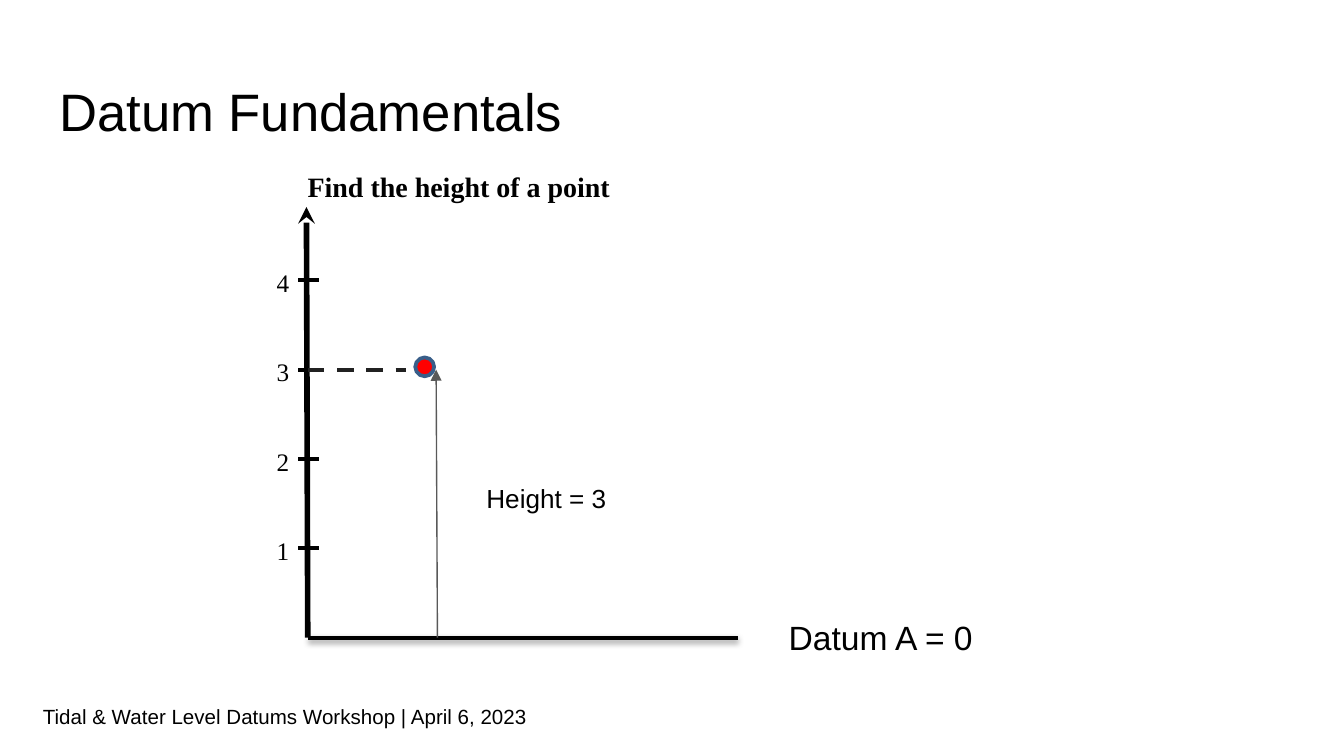
from dataclasses import dataclass

from lxml import etree
from pptx import Presentation
from pptx.dml.color import RGBColor
from pptx.enum.dml import MSO_LINE
from pptx.enum.shapes import MSO_CONNECTOR, MSO_SHAPE
from pptx.enum.text import MSO_ANCHOR, MSO_AUTO_SIZE, PP_ALIGN
from pptx.oxml import parse_xml
from pptx.oxml.ns import nsdecls, qn
from pptx.util import Inches, Pt


@dataclass(frozen=True)
class Theme:
    sans: str = "Arial"
    serif: str = "Times New Roman"
    ink: str = "000000"
    dash: str = "212121"
    arrow: str = "595959"
    point: str = "FF0000"
    point_edge: str = "395E89"
    title_size: float = 28.2
    datum_size: float = 18
    heading_size: float = 15
    height_size: float = 14
    tick_size: float = 13.5
    footer_size: float = 11


THEME = Theme()

# Content: text, box (left, top, width, height in percent of the slide),
# vertical inset in inches, font, size, bold
TITLE = ("Datum Fundamentals", (3.4, 8.71, 93.2, 11.2), 0.1,
         THEME.sans, THEME.title_size, False)
LABELS = [
    ("Tidal & Water Level Datums Workshop | April 6, 2023",
     (2.2, 91.38, 54.1, 6.93), 0.1, THEME.sans, THEME.footer_size, False),
    ("Find the height of a point", (21.9, 21.51, 29.9, 6.22), 0.05,
     THEME.serif, THEME.heading_size, True),
    ("Datum A = 0", (57.7, 80.71, 18.8, 7.11), 0.05,
     THEME.sans, THEME.datum_size, False),
    ("Height = 3", (35.2, 62.04, 20.9, 7.82), 0.1,
     THEME.sans, THEME.height_size, False),
]
TICKS = [1, 2, 3, 4]
POINT_HEIGHT = 3

# Diagram scale, in percent of the slide
AXIS_X, AXIS_TOP, DATUM_Y, DATUM_END = 22.9, 27.38, 84.36, 54.9
UNIT = 11.82
TICK_LEFT, TICK_RIGHT = 22.2, 37 / 1.56
LABEL_LEFT, LABEL_RISE, LABEL_WIDTH, LABEL_HEIGHT = 19.6, 2.58, 3, 5.87
POINT_X, POINT_Y, POINT_SIZE = 31.6, 48.53, 0.14
DASH_END, ARROW_X = 30.2, 32.55

presentation = Presentation()
presentation.slide_width, presentation.slide_height = Inches(10), Inches(5.625)
slide = presentation.slides.add_slide(presentation.slide_layouts[5])


def across(percent):
    return round(presentation.slide_width * percent / 100)


def down(percent):
    return round(presentation.slide_height * percent / 100)


def level(height):
    """Vertical place of a height above the datum."""
    return DATUM_Y - UNIT * height


def write(shape, text, box, inset, font, size, bold):
    left, top, width, height = box
    shape.left, shape.top = across(left), down(top)
    shape.width, shape.height = across(width), down(height)
    frame = shape.text_frame
    frame.text = text
    frame.word_wrap = True
    frame.auto_size = MSO_AUTO_SIZE.NONE
    frame.vertical_anchor = MSO_ANCHOR.TOP
    frame.margin_left = frame.margin_right = Inches(0.1)
    frame.margin_top = frame.margin_bottom = Inches(inset)
    paragraph = frame.paragraphs[0]
    paragraph.alignment = PP_ALIGN.LEFT
    run = paragraph.runs[0]
    run.font.name, run.font.size, run.font.bold = font, Pt(size), bold
    run.font.color.rgb = RGBColor.from_string(THEME.ink)


def add_label(*label):
    write(slide.shapes.add_textbox(0, 0, 0, 0), *label)


def add_line(start, end, color, width, dash=None, arrow=None, shadow=False):
    line = slide.shapes.add_connector(
        MSO_CONNECTOR.STRAIGHT, across(start[0]), down(start[1]),
        across(end[0]), down(end[1]))
    line.line.color.rgb = RGBColor.from_string(color)
    line.line.width = Pt(width)
    if dash:
        line.line.dash_style = dash
    if arrow:
        etree.SubElement(line.line._get_or_add_ln(), qn("a:tailEnd"), type=arrow)
    cast = (f'<a:outerShdw blurRad="{Pt(3.1)}" dist="{Pt(1.6)}" dir="5400000" '
            f'rotWithShape="0"><a:srgbClr val="{THEME.ink}">'
            '<a:alpha val="38000"/></a:srgbClr></a:outerShdw>') if shadow else ""
    line._element.spPr.append(
        parse_xml(f'<a:effectLst {nsdecls("a")}>{cast}</a:effectLst>'))


# Title and free text
write(slide.shapes.title, *TITLE)
for label in LABELS:
    add_label(*label)

# Marked point
point = slide.shapes.add_shape(
    MSO_SHAPE.OVAL, across(POINT_X) - Inches(POINT_SIZE / 2),
    down(POINT_Y) - Inches(POINT_SIZE / 2), Inches(POINT_SIZE), Inches(POINT_SIZE))
point.shadow.inherit = False
point.fill.solid()
point.fill.fore_color.rgb = RGBColor.from_string(THEME.point)
point.line.color.rgb = RGBColor.from_string(THEME.point_edge)
point.line.width = Pt(2)

# Height axis with its ticks, and the datum line
add_line((AXIS_X, DATUM_Y), (AXIS_X - 0.1, AXIS_TOP), THEME.ink, 3, arrow="stealth")
for tick in TICKS:
    add_line((TICK_LEFT, level(tick)), (TICK_RIGHT, level(tick)), THEME.ink, 2)
    add_label(str(tick),
              (LABEL_LEFT, level(tick) - LABEL_RISE, LABEL_WIDTH, LABEL_HEIGHT),
              0.05, THEME.serif, THEME.tick_size, False)
add_line((AXIS_X, DATUM_Y), (DATUM_END, DATUM_Y), THEME.ink, 2, shadow=True)

# Reading of the point: dashed level and height arrow
add_line((AXIS_X, level(POINT_HEIGHT)), (DASH_END, level(POINT_HEIGHT)),
         THEME.dash, 2.25, dash=MSO_LINE.DASH)
add_line((ARROW_X, DATUM_Y), (ARROW_X - 0.1, level(POINT_HEIGHT)),
         THEME.arrow, 0.75, arrow="triangle")

presentation.save("out.pptx")
